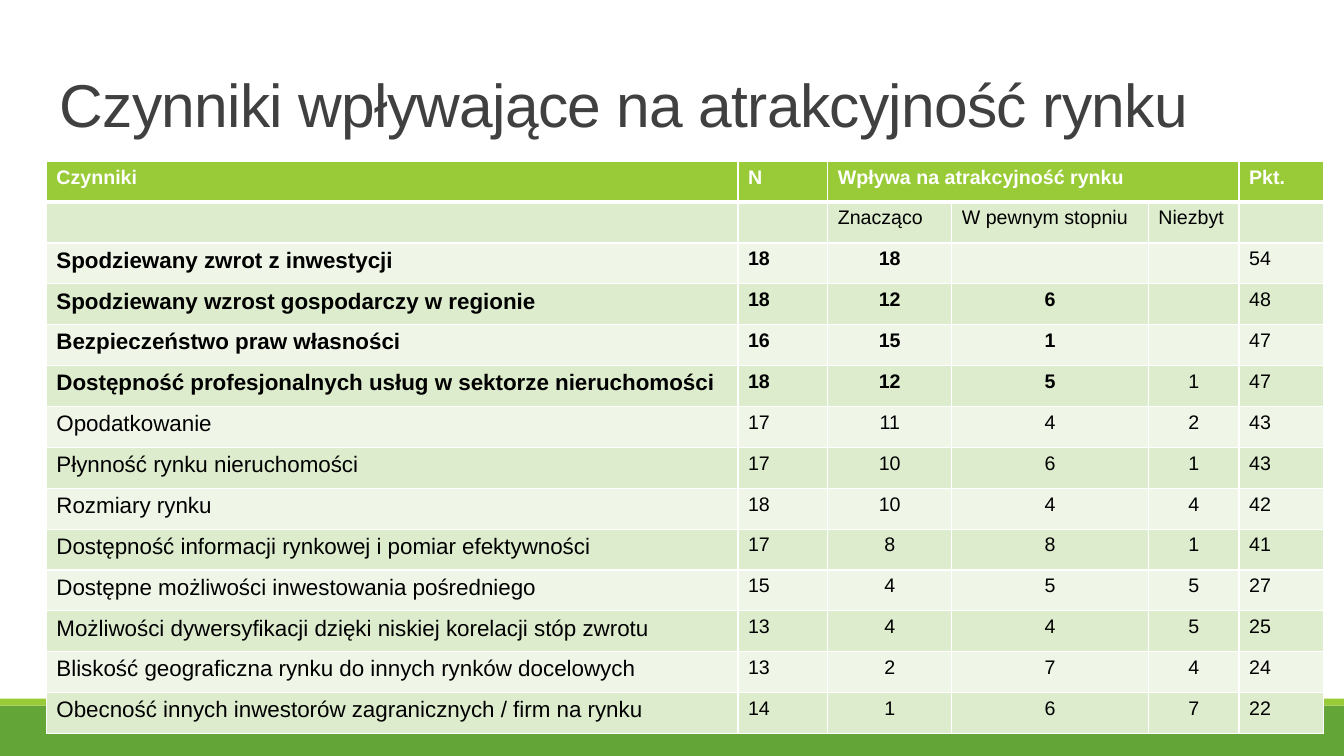
from lxml import etree
from pptx import Presentation
from pptx import util as u
from pptx.dml.color import RGBColor
from pptx.enum import shapes, text
from pptx.oxml.ns import qn

WIDTH, HEIGHT = u.Inches(13.33), u.Inches(7.5)
COLORS = {
    "title": "404040",
    "text": "000000",
    "white": "FFFFFF",
    "lime": "99CB38",
    "green": "63A537",
    "band_dark": "DEECCE",
    "band_light": "EFF6E8",
}
FONT = "Arial"
COLUMN_SHARES = [51.46, 6.68, 9.23, 14.63, 6.75, 6.3]
CENTERED_COLUMNS = range(2, 5)
KEY_ROWS = range(2, 6)
KEY_COLUMNS = range(4)
ROWS = [
    ["Czynniki", "N", "Wpływa na atrakcyjność rynku", "", "", "Pkt."],
    ["", "", "Znacząco", "W pewnym stopniu", "Niezbyt", ""],
    ["Spodziewany zwrot z inwestycji", "18", "18", "", "", "54"],
    ["Spodziewany wzrost gospodarczy w regionie", "18", "12", "6", "", "48"],
    ["Bezpieczeństwo praw własności", "16", "15", "1", "", "47"],
    ["Dostępność profesjonalnych usług w sektorze nieruchomości", "18", "12", "5", "1", "47"],
    ["Opodatkowanie", "17", "11", "4", "2", "43"],
    ["Płynność rynku nieruchomości", "17", "10", "6", "1", "43"],
    ["Rozmiary rynku", "18", "10", "4", "4", "42"],
    ["Dostępność informacji rynkowej i pomiar efektywności", "17", "8", "8", "1", "41"],
    ["Dostępne możliwości inwestowania pośredniego", "15", "4", "5", "5", "27"],
    ["Możliwości dywersyfikacji dzięki niskiej korelacji stóp zwrotu", "13", "4", "4", "5", "25"],
    ["Bliskość geograficzna rynku do innych rynków docelowych", "13", "2", "7", "4", "24"],
    ["Obecność innych inwestorów zagranicznych / firm na rynku", "14", "1", "6", "7", "22"],
]


def rgb(name):
    return RGBColor.from_string(COLORS[name])


def box(left, top, width, height):
    """Turn percentages of the slide's size into lengths."""
    return [int(share * side / 100) for share, side in
            zip((left, top, width, height), (WIDTH, HEIGHT) * 2)]


def set_all(obj, values):
    for name, value in values.items():
        setattr(obj, name, value)


def add_run(p, wording, color, **font):
    r = p.add_run()
    r.text = wording
    set_all(r.font, {"name": FONT, **font})
    r.font.color.rgb = rgb(color)
    return r


def add_bar(s, color, *shares):
    sp = s.shapes.add_shape(shapes.MSO_SHAPE.RECTANGLE, *box(*shares))
    sp.shadow.inherit = False
    sp.fill.solid()
    sp.fill.fore_color.rgb = rgb(color)
    sp.line.fill.background()


def add_title(s, wording):
    sp = s.shapes.title
    set_all(sp, dict(zip(("left", "top", "width", "height"), box(3.68, 0, 89.72, 19.2))))
    tf = sp.text_frame
    set_all(tf, {"word_wrap": True, "auto_size": text.MSO_AUTO_SIZE.NONE,
                 "vertical_anchor": text.MSO_ANCHOR.BOTTOM})
    p = tf.paragraphs[0]
    set_all(p, {"alignment": text.PP_ALIGN.LEFT, "line_spacing": 0.85})
    r = add_run(p, wording, "title", size=u.Pt(43.2))
    r.font._element.set("spc", "-50")


def set_borders(cell, row):
    """White rules, thicker between the header and the body."""
    tc_pr = cell._tc.get_or_add_tcPr()
    thick = {0: "lnB", 1: "lnT"}.get(row)
    for side in ("lnL", "lnR", "lnT", "lnB"):
        ln = etree.SubElement(tc_pr, qn(f"a:{side}"), w=str(u.Pt(3 if side == thick else 1)))
        fill = etree.SubElement(ln, qn("a:solidFill"))
        etree.SubElement(fill, qn("a:srgbClr"), val=COLORS["white"])


def fill_cell(cell, row, col, wording):
    set_borders(cell, row)
    cell.fill.solid()
    band = "band_dark" if row % 2 else "band_light"
    cell.fill.fore_color.rgb = rgb("lime" if row == 0 else band)
    if not wording:
        return
    p = cell.text_frame.paragraphs[0]
    if row > 1 and col in CENTERED_COLUMNS:
        p.alignment = text.PP_ALIGN.CENTER
    add_run(p, wording, "text" if row else "white",
            size=u.Pt(16 if row > 1 and col == 0 else 14),
            bold=row == 0 or (row in KEY_ROWS and col in KEY_COLUMNS))


def add_factor_table(s):
    left, top, width, height = box(3.45, 21.33, sum(COLUMN_SHARES), 75.73)
    table = s.shapes.add_table(len(ROWS), len(COLUMN_SHARES), left, top, width, height).table
    for column, share in zip(table.columns, COLUMN_SHARES):
        column.width = int(WIDTH * share / 100)
    for row, wordings in enumerate(ROWS):
        for col, wording in enumerate(wordings):
            fill_cell(table.cell(row, col), row, col, wording)
    table.cell(0, 2).merge(table.cell(0, 4))


def main():
    prs = Presentation()
    set_all(prs, {"slide_width": WIDTH, "slide_height": HEIGHT})
    s = prs.slides.add_slide(prs.slide_layouts[5])
    add_bar(s, "green", 0, 93.33, 100, 6.67)
    add_bar(s, "lime", 0, 92.4, 100, 0.93)
    add_title(s, "Czynniki wpływające na atrakcyjność rynku")
    add_factor_table(s)
    prs.save("out.pptx")


if __name__ == "__main__":
    main()
